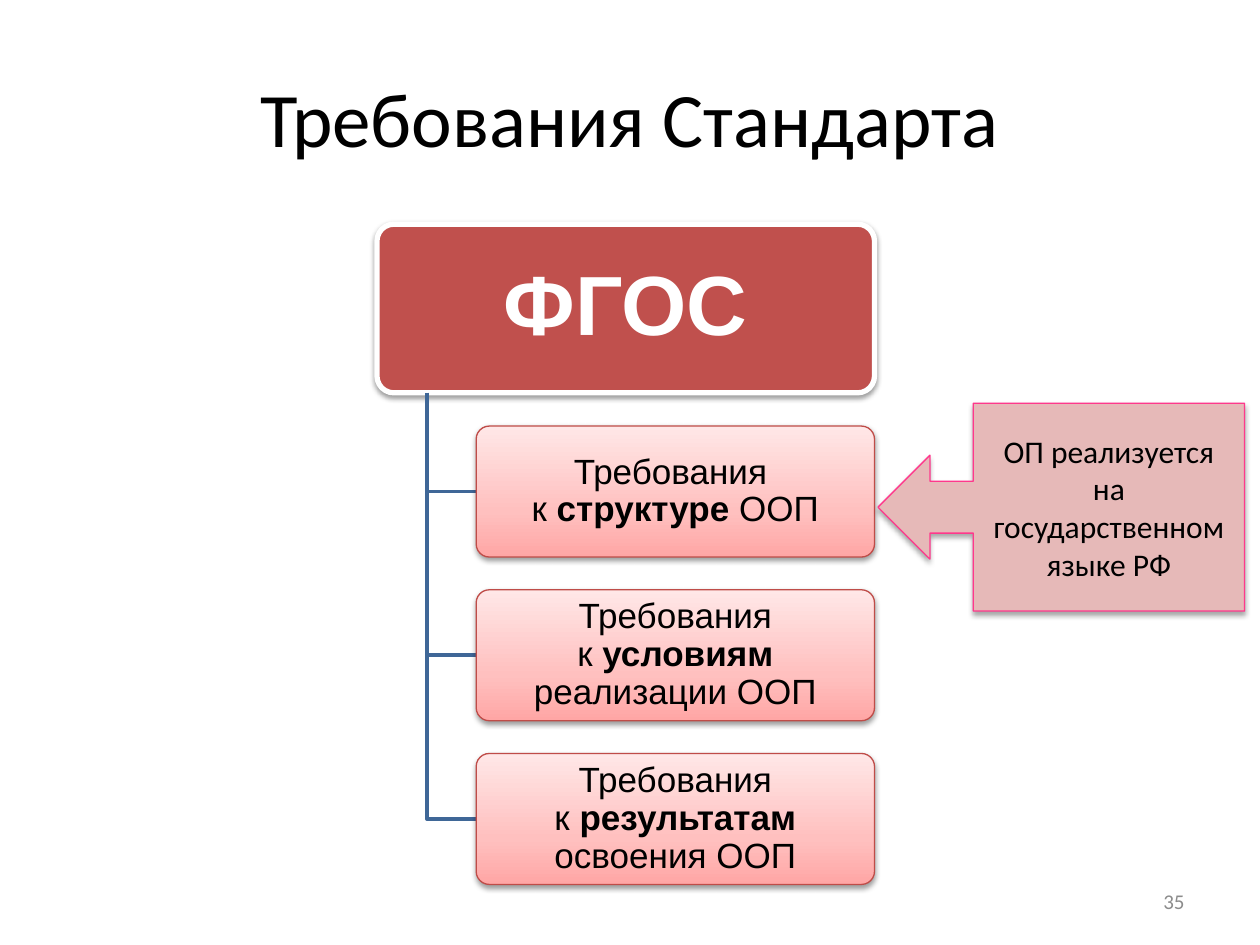
import pptx
import pptx.util
import pptx.dml.color
import pptx.enum.shapes
import pptx.enum.text
import pptx.oxml
import pptx.oxml.ns

Cm, Pt = pptx.util.Cm, pptx.util.Pt
Kind = pptx.enum.shapes.MSO_SHAPE
Align = pptx.enum.text.PP_ALIGN
qn, nsdecls = pptx.oxml.ns.qn, pptx.oxml.ns.nsdecls

# Content: each leaf is lead, bold word, tail
TITLE = "Требования Стандарта"
ROOT = "ФГОС"
LEAVES = [
    ("Требования \vк", " структуре", " ООП"),
    ("Требования\vк", " условиям ", "реализации ООП"),
    ("Требования\vк ", "результатам", " освоения ООП"),
]
NOTE = "ОП реализуется на государственном языке РФ"
PAGE = "35"

THEME = {
    "head": "Calibri", "body": "Arial",
    "ink": "000000", "white": "FFFFFF", "grey": "8C8C8C",
    "root": "C0504D", "edge": "BF4C48", "link": "3F6797",
    "note": "E6B9B8", "pink": "FF388C",
    "fade": [(0, "FFA6A5"), (35, "FFC0BF"), (100, "FFE7E7")],
    "title": 44, "top": 48, "leaf": 20, "call": 18, "page": 12,
}

# Layout in cm: left, top, width, height
TITLE_BOX = (1.27, 0.76, 22.86, 3.18)
ROOT_BOX = (7.6, 4.52, 10.03, 3.4)
LEAF_BOX = (9.6, 8.59, 8.03, 2.64)
NOTE_BOX = (17.7, 8.13, 7.39, 4.19)
PAGE_BOX = (18.21, 17.65, 5.92, 1.02)
STEP = 3.3
SPINE = ROOT_BOX[0] + 0.1 * ROOT_BOX[2]


def tint(name):
    return pptx.dml.color.RGBColor.from_string(THEME[name])


def write(shape, parts, size, font, ink, bold=(), align=Align.CENTER,
          inset=(0.25, 0.13), space=None):
    """Fill a shape with one paragraph; bold lists the bold parts."""
    frame = shape.text_frame
    frame.word_wrap = True
    frame.vertical_anchor = pptx.enum.text.MSO_ANCHOR.MIDDLE
    frame.margin_left = frame.margin_right = Cm(inset[0])
    frame.margin_top = frame.margin_bottom = Cm(inset[1])
    para = frame.paragraphs[0]
    para.text = parts[0]
    for part in parts[1:]:
        para.add_run().text = part
    para.alignment = align
    para.line_spacing = space
    for run in para.runs:
        run.font.size = Pt(THEME[size])
        run.font.name = THEME[font]
        run.font.color.rgb = tint(ink)
        run.font.bold = run.text in bold


def shade(shape, alpha, dist):
    """Give a soft shadow straight below the shape."""
    shape.shadow.inherit = False
    shape.element.spPr.find(qn("a:effectLst")).append(pptx.oxml.parse_xml(
        f'<a:outerShdw {nsdecls("a")} blurRad="{Pt(3.1)}" dist="{Pt(dist)}" '
        f'dir="5400000" rotWithShape="0"><a:srgbClr val="000000">'
        f'<a:alpha val="{alpha * 1000}"/></a:srgbClr></a:outerShdw>'))


def fade(shape):
    """Fill with the theme's three-stop gradient, rising from below."""
    shape.fill.gradient()
    stops = "".join(f'<a:gs pos="{at * 1000}"><a:srgbClr val="{hue}"/></a:gs>'
                    for at, hue in THEME["fade"])
    props = shape.element.spPr
    props.replace(props.find(qn("a:gradFill")), pptx.oxml.parse_xml(
        f'<a:gradFill {nsdecls("a")} rotWithShape="1"><a:gsLst>{stops}'
        f'</a:gsLst><a:lin ang="16200000" scaled="0"/></a:gradFill>'))


def block(kind, box, fill, edge, width, adjust, alpha=38, dist=1.6):
    shape = slide.shapes.add_shape(kind, *map(Cm, box))
    for i, val in enumerate(adjust):
        shape.adjustments[i] = val
    if fill == "fade":
        fade(shape)
    else:
        shape.fill.solid()
        shape.fill.fore_color.rgb = tint(fill)
    shape.line.color.rgb = tint(edge)
    shape.line.width = Pt(width)
    shade(shape, alpha, dist)
    return shape


def link(mid):
    """Draw an elbow from the root's foot to a leaf's left side."""
    foot = ROOT_BOX[1] + ROOT_BOX[3]
    pen = slide.shapes.build_freeform(Cm(SPINE), Cm(foot))
    pen.add_line_segments([(Cm(SPINE), Cm(mid)), (Cm(LEAF_BOX[0]), Cm(mid))],
                          close=False)
    shape = pen.convert_to_shape()
    shape.fill.background()
    shape.line.color.rgb = tint("link")
    shape.line.width = Pt(2)
    shape.shadow.inherit = False


deck = pptx.Presentation()
deck.slide_width, deck.slide_height = Cm(25.4), Cm(19.05)
slide = deck.slides.add_slide(deck.slide_layouts[6])

# Title and page number
write(slide.shapes.add_textbox(*map(Cm, TITLE_BOX)), [TITLE],
      "title", "head", "ink")
write(slide.shapes.add_textbox(*map(Cm, PAGE_BOX)), [PAGE],
      "page", "head", "grey", align=Align.RIGHT)

# Root of the tree
root = block(Kind.ROUNDED_RECTANGLE, ROOT_BOX, "root", "white", 3, [0.1])
write(root, [ROOT], "top", "body", "white", bold=[ROOT],
      inset=(0.35, 0.28), space=0.9)

# Leaves, each with its elbow
left, top, wide, high = LEAF_BOX
for i, parts in enumerate(LEAVES):
    y = top + i * STEP
    link(y + high / 2)
    leaf = block(Kind.ROUNDED_RECTANGLE, (left, y, wide, high),
                 "fade", "edge", 0.75, [0.1])
    write(leaf, parts, "leaf", "body", "ink", bold=parts[1:2],
          inset=(0.18, 0.15), space=0.9)

# Side note
note = block(Kind.LEFT_ARROW_CALLOUT, NOTE_BOX, "note", "pink", 0.75,
             [0.25, 0.25, 0.25, 0.74], alpha=35, dist=1.8)
write(note, [NOTE], "call", "head", "ink")

deck.save("out.pptx")
